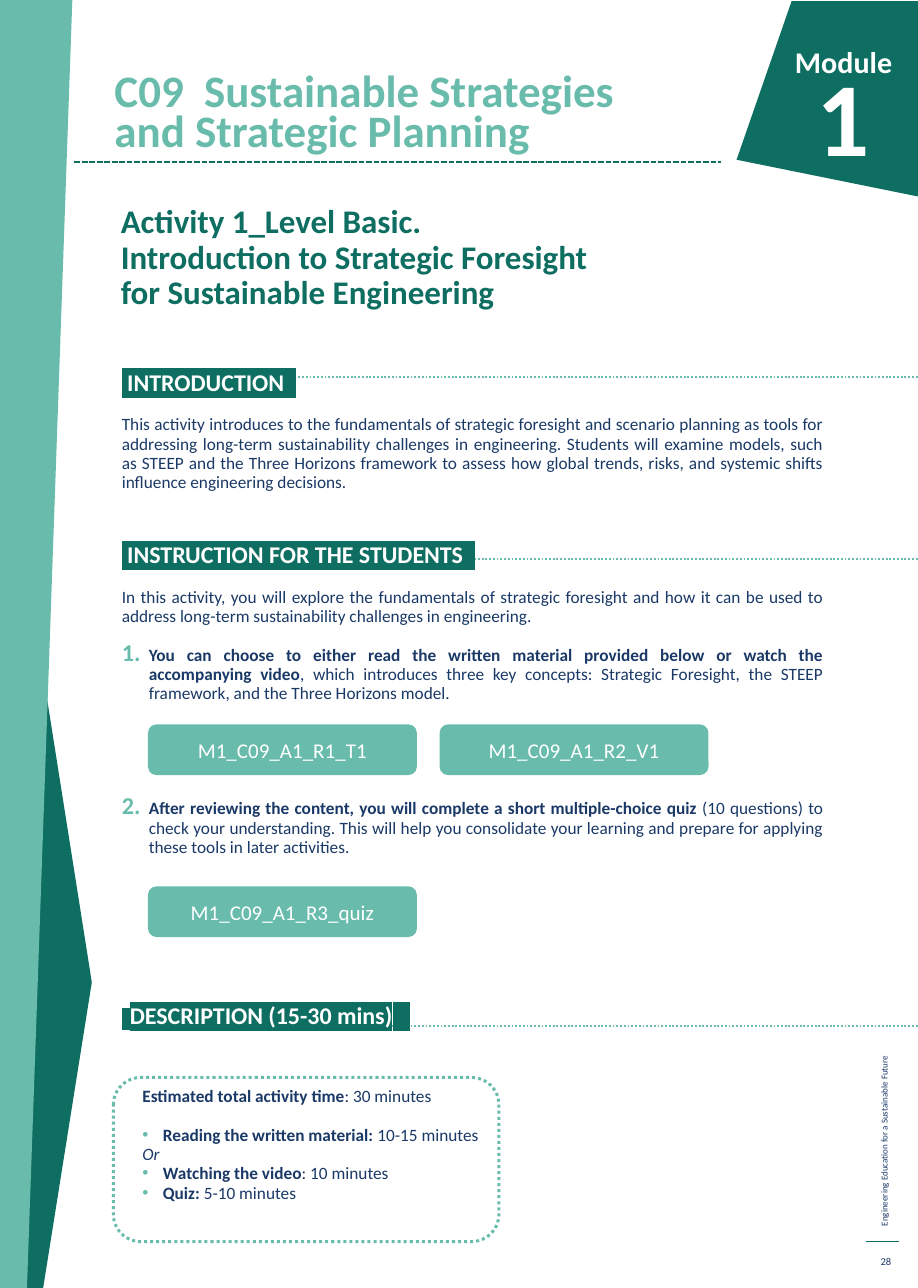
from lxml import etree
from pptx import Presentation
from pptx.dml.color import RGBColor
from pptx.enum import dml, shapes, text
from pptx.oxml import ns
from pptx.util import Inches, Pt

FONT = "Calibri"
GREEN = RGBColor(0x0E, 0x6E, 0x61)
MINT = RGBColor(0x69, 0xBC, 0xAC)
NAVY = RGBColor(0x1A, 0x39, 0x66)
WHITE = RGBColor(0xFF, 0xFF, 0xFF)
LINE_PITCH = 12.8
DOTTED = dml.MSO_LINE.ROUND_DOT
JUSTIFY = text.PP_ALIGN.JUSTIFY


def inches(*lengths):
    return [Inches(length) for length in lengths]


def add_xml(parent, tag, **attributes):
    return etree.SubElement(parent, ns.qn(tag), attributes)


def add_run(paragraph, words, size=11.5, color=NAVY, bold=False, italic=False, highlight=None):
    run = paragraph.add_run()
    run.text = words
    font = run.font
    font.size, font.bold, font.italic = Pt(size), bold, italic
    font.color.rgb = color
    if highlight is not None:
        marker = add_xml(run._r.get_or_add_rPr(), "a:highlight")
        add_xml(marker, "a:srgbClr", val=str(highlight))
    font.name = FONT


def write(shape, lines, align=text.PP_ALIGN.LEFT, anchor=text.MSO_ANCHOR.TOP,
          spacing=None, **style):
    """Fill a shape with one paragraph; a list of lines is joined by line breaks."""
    frame = shape.text_frame
    frame.word_wrap = True
    frame.auto_size = text.MSO_AUTO_SIZE.NONE
    frame.vertical_anchor = anchor
    paragraph = frame.paragraphs[0]
    paragraph.alignment = align
    if spacing:
        paragraph.line_spacing = spacing
    for index, line in enumerate([lines] if isinstance(lines, str) else lines):
        if index:
            paragraph.add_line_break()
        add_run(paragraph, line, **style)
    return shape


def add_label(slide, box, lines, **style):
    return write(slide.shapes.add_textbox(*inches(*box)), lines, **style)


def add_polygon(slide, points, color):
    start, *others = [inches(*point) for point in points]
    builder = slide.shapes.build_freeform(*start)
    builder.add_line_segments(others, close=True)
    polygon = builder.convert_to_shape()
    polygon.shadow.inherit = False
    polygon.fill.solid()
    polygon.fill.fore_color.rgb = color
    polygon.line.fill.background()


def add_rule(slide, left, right, top, color=MINT, width=1.25, dash=DOTTED):
    rule = slide.shapes.add_connector(
        shapes.MSO_CONNECTOR.STRAIGHT, *inches(left, top, right, top))
    rule.line.color.rgb = color
    rule.line.width = Pt(width)
    if dash:
        rule.line.dash_style = dash
    add_xml(rule._element.spPr, "a:effectLst")


def add_rounded(slide, box, filled):
    rounded = slide.shapes.add_shape(shapes.MSO_SHAPE.ROUNDED_RECTANGLE, *inches(*box))
    rounded.shadow.inherit = False
    if filled:
        rounded.fill.solid()
        rounded.fill.fore_color.rgb = MINT
        rounded.line.fill.background()
    else:
        rounded.fill.background()
        rounded.line.color.rgb = MINT
        rounded.line.width = Pt(2)
        rounded.line.dash_style = DOTTED
    return rounded


def add_paragraph(frame, runs, lines_before=0, margin=0.01, hanging=0, number=None):
    """Add justified text; hanging text gets a number, or else a dot."""
    first = frame.paragraphs[0]
    paragraph = frame.add_paragraph() if first.runs else first
    paragraph.alignment = JUSTIFY
    paragraph.line_spacing = Pt(LINE_PITCH)
    paragraph.space_before = Pt(LINE_PITCH * lines_before)
    properties = paragraph._p.get_or_add_pPr()
    properties.set("marL", str(Inches(margin)))
    properties.set("indent", str(Inches(-hanging)))
    if hanging:
        add_xml(add_xml(properties, "a:buClr"), "a:srgbClr", val=str(MINT))
        if number:
            add_xml(properties, "a:buSzPct", val="140000")
            add_xml(properties, "a:buFont", typeface="+mj-lt")
            add_xml(properties, "a:buAutoNum", type="arabicPeriod", startAt=str(number))
        else:
            add_xml(properties, "a:buFont", typeface="Arial")
            add_xml(properties, "a:buChar", char="•")
    for words, style in runs:
        add_run(paragraph, words, **style)


def add_heading(frame, words, lines_before=0, lead=" ", lead_size=16, tail=". "):
    band = dict(bold=True, highlight=GREEN)
    add_paragraph(frame, [(lead, dict(size=lead_size, color=WHITE, **band)),
                          (words, dict(size=16, color=WHITE, **band)),
                          (tail, dict(size=16, color=GREEN, **band))], lines_before)


def add_body(slide):
    frame = slide.shapes.add_textbox(*inches(1.02, 3.44, 6.7, 8.14)).text_frame
    frame.word_wrap = True
    bold, plain = dict(bold=True), {}

    add_heading(frame, "INTRODUCTION")
    add_paragraph(frame, [(
        "This activity introduces to the fundamentals of strategic foresight and scenario "
        "planning as tools for addressing long-term sustainability challenges in engineering. "
        "Students will examine models, such as STEEP and the Three Horizons framework to assess "
        "how global trends, risks, and systemic shifts influence engineering decisions.",
        plain)], 1)

    add_heading(frame, "INSTRUCTION FOR THE STUDENTS", 3)
    add_paragraph(frame, [(
        "In this activity, you will explore the fundamentals of strategic foresight and how it "
        "can be used to address long-term sustainability challenges in engineering.", plain)], 1)
    steps = [
        (1, "You can choose to either read the written material provided below or watch the "
            "accompanying video",
         ", which introduces three key concepts: Strategic Foresight, the STEEP framework, "
         "and the Three Horizons model."),
        (5, "After reviewing the content, you will complete a short multiple-choice quiz ",
         "(10 questions) to check your understanding. This will help you consolidate your "
         "learning and prepare for applying these tools in later activities."),
    ]
    for number, (gap, task, details) in enumerate(steps, 1):
        add_paragraph(frame, [(task, bold), (details, plain)], gap, 0.26, 0.25, number)

    add_heading(frame, "DESCRIPTION (15-30 mins)", 8, lead="  ", lead_size=12, tail=".  ")
    add_paragraph(frame, [("Estimated total activity time", bold), (": 30 minutes", plain)],
                  3, 0.2)
    add_paragraph(frame, [("Reading the written material: ", bold), ("10-15 minutes", plain)],
                  1, 0.39, 0.19)
    add_paragraph(frame, [("Or", dict(italic=True))], 0, 0.2)
    for task, duration in [("Watching the video", ": 10 minutes"), ("Quiz: ", "5-10 minutes")]:
        add_paragraph(frame, [(task, bold), (duration, plain)], 0, 0.39, 0.19)


def main():
    deck = Presentation()
    deck.slide_width, deck.slide_height = inches(8.5, 11.93)
    slide = deck.slides.add_slide(deck.slide_layouts[5])

    # Page margin: side strips, running title, page number
    add_polygon(slide, [(0.4, 11.93), (0.23, 11.93), (0.23, 5.17), (0.83, 8.97), (0.85, 9.1)],
                GREEN)
    add_polygon(slide, [(0, 0), (0.67, 0), (0.25, 11.93), (0, 11.93)], MINT)
    running_title = add_label(slide, (5.94, 9.11, 4.49, 0.2),
                              "Engineering Education for a Sustainable Future", size=6)
    running_title.rotation = 270
    add_rule(slide, 8.02, 8.32, 11.5, GREEN, 0.75, None)
    add_label(slide, (8.02, 11.54, 0.33, 0.29), "28", size=7,
              align=text.PP_ALIGN.RIGHT, anchor=text.MSO_ANCHOR.MIDDLE)

    # Title and activity name
    title = slide.shapes.title
    title.left, title.top, title.width, title.height = inches(0.96, 0.78, 5.36, 1.05)
    write(title, "C09  Sustainable Strategies and Strategic Planning", size=30, color=MINT,
          bold=True, anchor=text.MSO_ANCHOR.BOTTOM, spacing=Pt(26.8))
    title.text_frame.margin_bottom = Inches(0.38)
    add_rule(slide, 0.69, 6.68, 1.5, GREEN, dash=dml.MSO_LINE.SQUARE_DOT)
    add_label(slide, (1.02, 1.85, 6.89, 1.05),
              ["Activity 1_Level Basic.", "Introduction to Strategic Foresight",
               "for Sustainable Engineering"],
              size=22, color=GREEN, bold=True, spacing=0.9)

    # Module badge
    add_polygon(slide, [(8.57, 0.01), (7.33, 0.01), (6.82, 1.48), (8.55, 1.83)], GREEN)
    for left, top, words, size in [(6.56, 0.35, "Module", 20), (6.35, 0.43, "1", 70)]:
        add_label(slide, (left, top, 1.8, 1.42), words, size=size, color=WHITE, bold=True,
                  align=text.PP_ALIGN.RIGHT)

    # Sections, each heading followed by a dotted rule
    for top in (3.49, 5.18, 9.5):
        add_rule(slide, 2.52, 8.5, top)
    add_body(slide)
    add_rounded(slide, (1.05, 9.98, 3.57, 1.52), filled=False)

    # Resource buttons
    for left, top, resource in [(1.37, 6.71, "M1_C09_A1_R1_T1"), (4.07, 6.71, "M1_C09_A1_R2_V1"),
                                (1.37, 8.21, "M1_C09_A1_R3_quiz")]:
        write(add_rounded(slide, (left, top, 2.49, 0.47), filled=True), resource, size=14,
              color=WHITE, align=text.PP_ALIGN.CENTER, anchor=text.MSO_ANCHOR.MIDDLE)

    deck.save("out.pptx")


if __name__ == "__main__":
    main()
